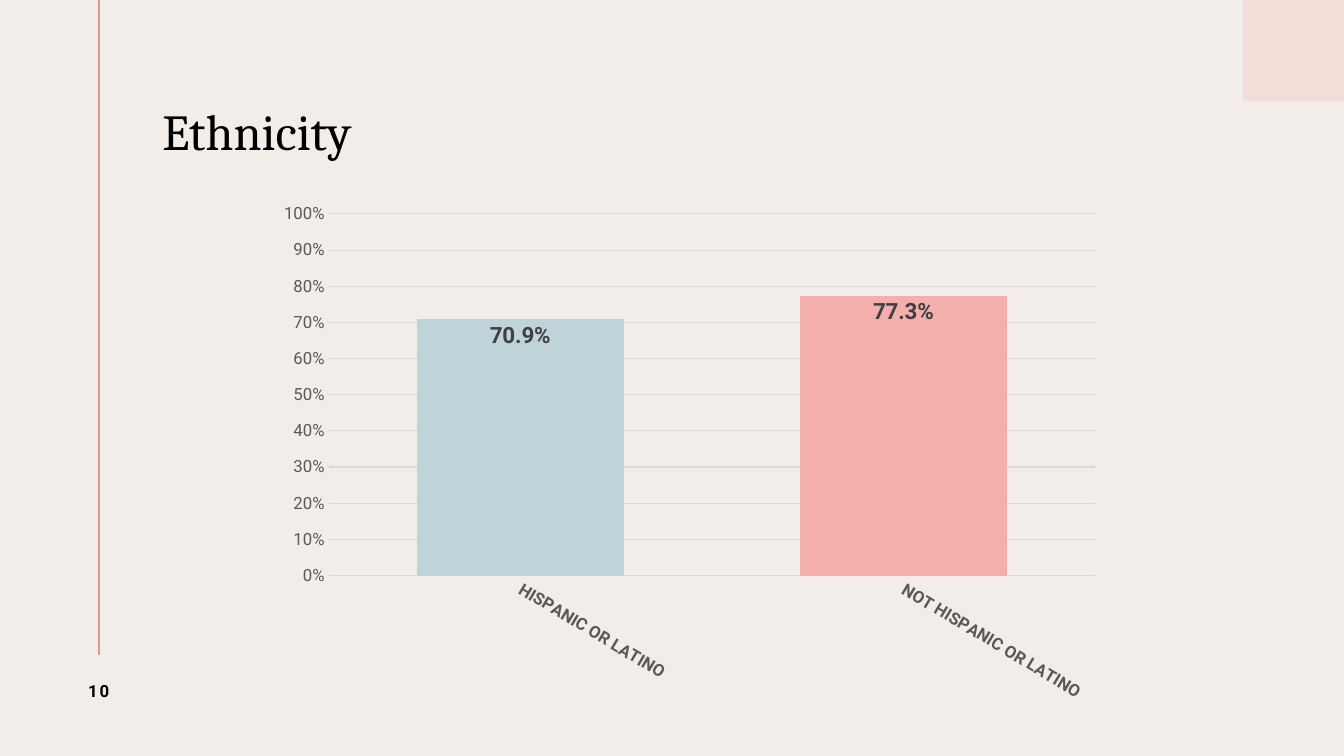
from pptx import Presentation
from pptx.chart.data import CategoryChartData
from pptx.dml.color import RGBColor
from pptx.enum.chart import XL_CHART_TYPE, XL_LABEL_POSITION, XL_TICK_MARK
from pptx.enum.shapes import MSO_CONNECTOR, MSO_SHAPE
from pptx.enum.text import MSO_ANCHOR, PP_ALIGN
from pptx.oxml.ns import qn
from pptx.util import Inches, Pt

WIDTH, HEIGHT = 40 / 3, 7.5
LABEL_ANGLE = 31
HEADING, BODY = "Cambria", "Roboto"
BACKGROUND, BLACK, GRID, AXIS_TEXT = "F3EDEA", "000000", "D9D9D9", "595959"
ETHNICITY = {
    "HISPANIC OR LATINO": (0.709, "BFD4D9"),
    "NOT HISPANIC OR LATINO": (0.773, "F3AFAC"),
}


def color(value):
    return RGBColor.from_string(value)


def set_all(target, values):
    for name, value in values.items():
        setattr(target, name, value)


def style_font(font, size, tint, name=BODY, bold=False):
    set_all(font, {"size": Pt(size), "name": name, "bold": bold})
    font.color.rgb = color(tint)


def style_line(line, tint, width):
    line.color.rgb = color(tint)
    line.width = Pt(width)


def fill_solid(fill, tint):
    fill.solid()
    fill.fore_color.rgb = color(tint)


def place(left, top, width, height):
    return [Inches(length) for length in (left, top, width, height)]


def add_corner(page):
    corner = page.shapes.add_shape(MSO_SHAPE.RECTANGLE, *place(WIDTH - 1, 0, 1, 1))
    corner.shadow.inherit = False
    fill_solid(corner.fill, "F4DDD8")
    corner.line.fill.background()


def add_margin_line(page):
    rule = page.shapes.add_connector(MSO_CONNECTOR.STRAIGHT, *place(0.98, 0, 0.98, 6.5))
    style_line(rule.line, "DF998B", 1.5)
    rule._element.spPr.append(rule._element.makeelement(qn("a:effectLst")))


def write_text(box, text, alignment, frame_format):
    frame = box.text_frame
    set_all(frame, {"word_wrap": True, "vertical_anchor": MSO_ANCHOR.MIDDLE, **frame_format})
    para = frame.paragraphs[0]
    para.alignment = alignment
    span = para.add_run()
    span.text = text
    return para, span


def add_title(page, text):
    title = page.shapes.title
    bounds = place(1.61, 0.55, 10.73, 1.56)
    set_all(title, dict(zip(("left", "top", "width", "height"), bounds)))
    para, span = write_text(title, text, PP_ALIGN.LEFT, {"margin_left": 0})
    para.line_spacing = 0.9
    style_font(span.font, 36, BLACK, HEADING)


def add_page_number(page, text):
    box = page.shapes.add_textbox(*place(0.45, 6.5, 1.06, 0.71))
    para, span = write_text(box, text, PP_ALIGN.CENTER, {})
    style_font(span.font, 12, BLACK, bold=True)
    span.font._element.set("spc", "150")


def style_axes(chart):
    category, value = chart.category_axis, chart.value_axis
    for axis in (category, value):
        set_all(axis, {"major_tick_mark": XL_TICK_MARK.NONE, "minor_tick_mark": XL_TICK_MARK.NONE})
        style_font(axis.tick_labels.font, 12, AXIS_TEXT, bold=axis is category)
    style_line(category.format.line, GRID, 0.75)
    label_body = category._element.find(qn("c:txPr")).find(qn("a:bodyPr"))
    label_body.set("rot", str(LABEL_ANGLE * 60000))
    set_all(value, {"minimum_scale": 0, "maximum_scale": 1, "major_unit": 0.1,
                    "has_major_gridlines": True})
    set_all(value.tick_labels, {"number_format": "0%", "number_format_is_linked": False})
    value.format.line.fill.background()
    style_line(value.major_gridlines.format.line, GRID, 0.75)


def style_columns(plot, tints):
    set_all(plot, {"gap_width": 85, "vary_by_categories": False})
    series = plot.series[0]
    fill_solid(series.format.fill, "95B8BF")
    for index, tint in enumerate(tints):
        fill_solid(series.points[index].format.fill, tint)
    labels = series.data_labels
    set_all(labels, {"show_value": True, "position": XL_LABEL_POSITION.INSIDE_END,
                     "number_format": "0.0%", "number_format_is_linked": False})
    style_font(labels.font, 16, "404040", bold=True)


def add_column_chart(page, columns):
    values, tints = zip(*columns.values())
    chart_data = CategoryChartData(number_format="0.0%")
    chart_data.categories = list(columns)
    chart_data.add_series("Series 1", values)
    chart = page.shapes.add_chart(
        XL_CHART_TYPE.COLUMN_CLUSTERED, *place(2.65, 1.92, 8.38, 5.15), chart_data
    ).chart
    set_all(chart, {"has_legend": False, "has_title": False})
    style_font(chart.font, 10, BLACK)
    style_axes(chart)
    style_columns(chart.plots[0], tints)


def main():
    deck = Presentation()
    set_all(deck, {"slide_width": Inches(WIDTH), "slide_height": Inches(HEIGHT)})
    page = deck.slides.add_slide(deck.slide_layouts[5])
    fill_solid(page.background.fill, BACKGROUND)
    add_corner(page)
    add_margin_line(page)
    add_title(page, "Ethnicity")
    add_page_number(page, "10")
    add_column_chart(page, ETHNICITY)
    deck.save("out.pptx")


if __name__ == "__main__":
    main()
